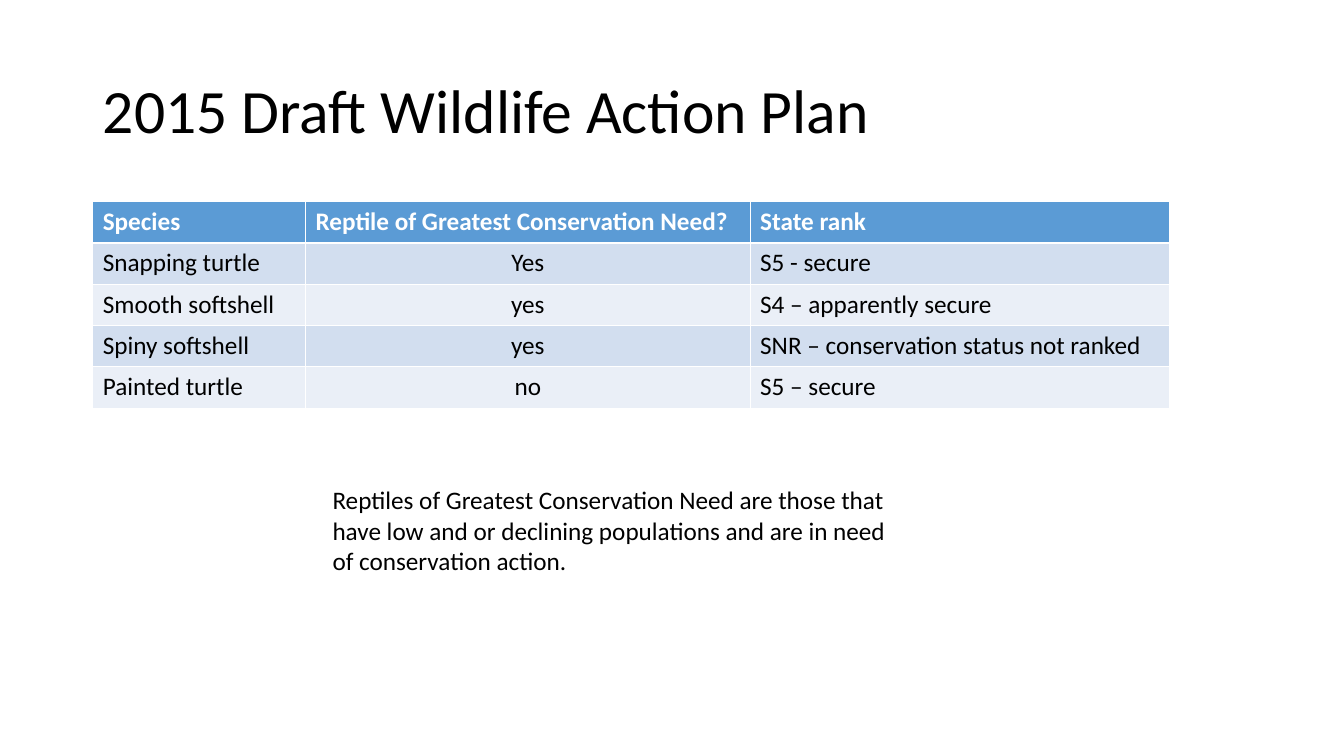
"""Build the wildlife action plan slide with its species table."""
from pptx import Presentation
from pptx.dml.color import RGBColor as Rgb
from pptx.enum.text import MSO_ANCHOR as Anchor, MSO_AUTO_SIZE as Fit, PP_ALIGN as Align
from pptx.util import Inches, Pt

HUES = {"head": "5B9BD5", "odd": "D2DEEF", "even": "EAEFF7", "text": "000000", "light": "FFFFFF"}
WIDTHS = [2.11, 4.41, 4.16]
HIGH = 0.41
ROWS = [
    ["Species", "Reptile of Greatest Conservation Need?", "State rank"],
    ["Snapping turtle", "Yes", "S5 - secure"],
    ["Smooth softshell", "yes", "S4 – apparently secure"],
    ["Spiny softshell", "yes", "SNR – conservation status not ranked"],
    ["Painted turtle", "no", "S5 – secure"],
]
NOTE = ("Reptiles of Greatest Conservation Need are those that have low and or "
        "declining populations and are in need of conservation action.")


def write(frame, text, size=18, hue="text", bold=False, align=Align.LEFT):
    line = frame.paragraphs[0]
    line.alignment = align
    run = line.add_run()
    run.text = text
    font = run.font
    font.name, font.size, font.bold = "Calibri", Pt(size), bold
    font.color.rgb = Rgb.from_string(HUES[hue])
    return line


deck = Presentation()
deck.slide_width, deck.slide_height = Inches(13.33), Inches(7.5)
slide = deck.slides.add_slide(deck.slide_layouts[5])

title = slide.shapes.title
title.left, title.top = Inches(0.92), Inches(0.4)
title.width, title.height = Inches(11.5), Inches(1.45)
title.text_frame.auto_size = Fit.NONE
title.text_frame.vertical_anchor = Anchor.MIDDLE
write(title.text_frame, "2015 Draft Wildlife Action Plan", 44).line_spacing = 0.9

table = slide.shapes.add_table(
    len(ROWS), len(WIDTHS), Inches(0.92), Inches(2),
    Inches(sum(WIDTHS)), Inches(HIGH * len(ROWS))).table
for col, width in zip(table.columns, WIDTHS):
    col.width = Inches(width)
for r, row in enumerate(ROWS):
    table.rows[r].height = Inches(HIGH)
    head = r == 0
    band = "head" if head else "odd" if r % 2 else "even"
    for c, text in enumerate(row):
        cell = table.cell(r, c)
        cell.fill.solid()
        cell.fill.fore_color.rgb = Rgb.from_string(HUES[band])
        align = Align.CENTER if c == 1 and not head else Align.LEFT
        write(cell.text_frame, text, hue="light" if head else "text", bold=head, align=align)

note = slide.shapes.add_textbox(Inches(3.2), Inches(4.76), Inches(5.9), Inches(1.01)).text_frame
note.word_wrap = True
note.auto_size = Fit.SHAPE_TO_FIT_TEXT
write(note, NOTE)

deck.save("out.pptx")
